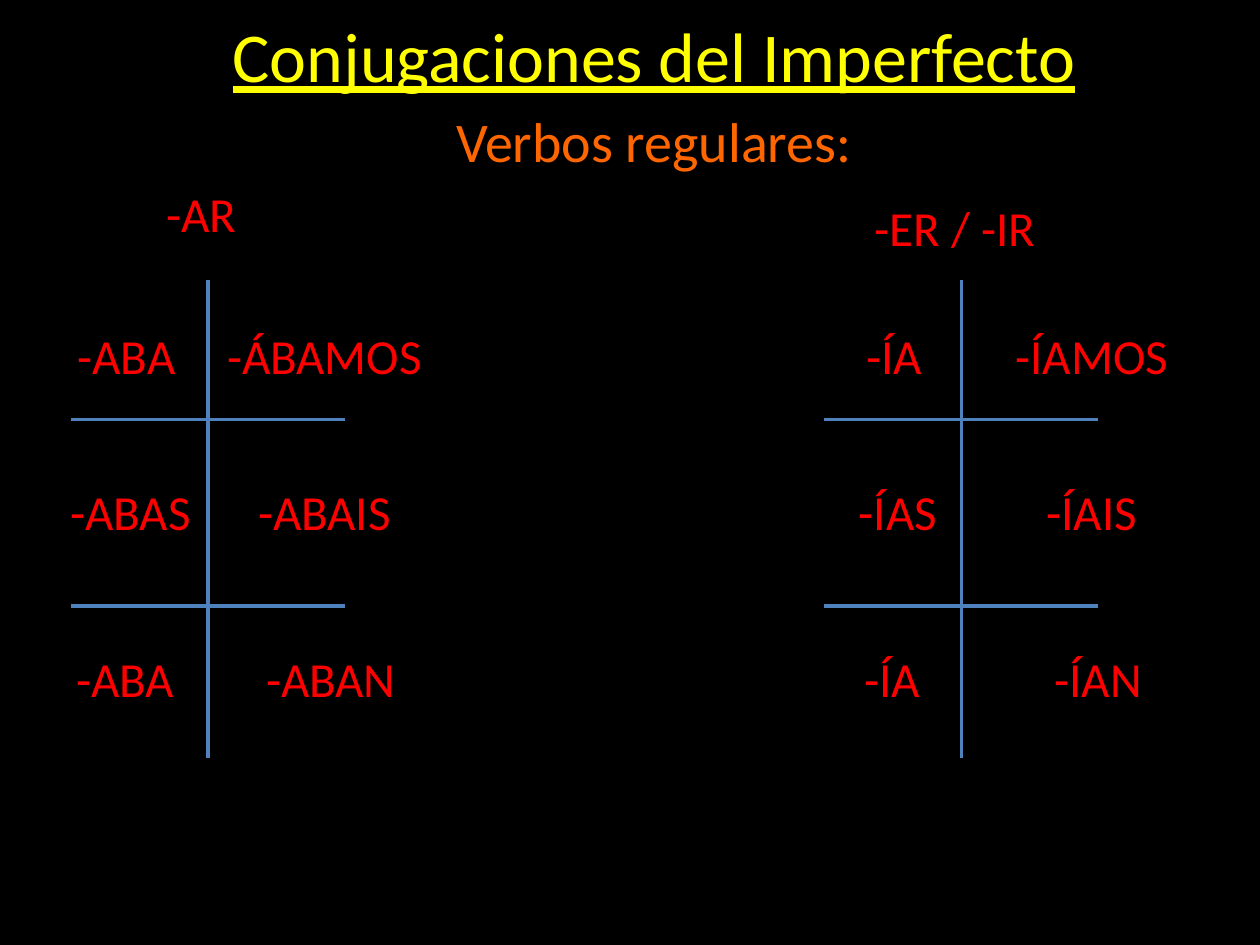
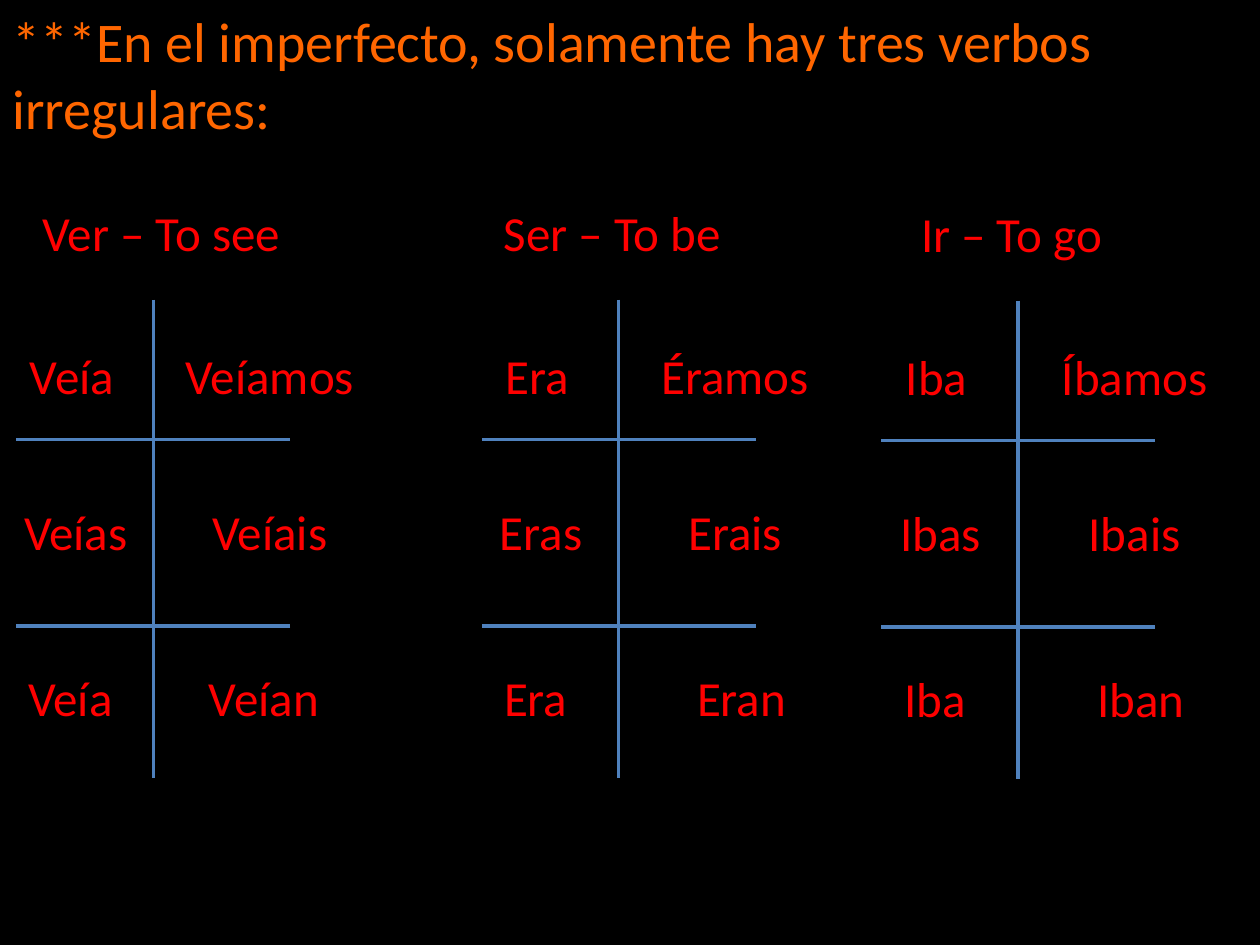
from dataclasses import dataclass

from lxml.etree import SubElement
from pptx import Presentation
from pptx.dml.color import RGBColor
from pptx.enum.shapes import MSO_CONNECTOR as Connector
from pptx.enum.text import MSO_ANCHOR as Anchor, MSO_AUTO_SIZE as AutoSize, PP_ALIGN as Align
from pptx.oxml.ns import qn
from pptx.util import Cm, Pt


@dataclass(frozen=True)
class Theme:
    font: str = "Calibri"
    background: RGBColor = RGBColor(0x00, 0x00, 0x00)
    title: RGBColor = RGBColor(0xFF, 0xFF, 0x00)
    subtitle: RGBColor = RGBColor(0xFF, 0x66, 0x00)
    verb: RGBColor = RGBColor(0xFF, 0x00, 0x00)
    rule: RGBColor = RGBColor(0x4F, 0x81, 0xBD)
    title_size: Pt = Pt(40)
    subtitle_size: Pt = Pt(32)
    verb_size: Pt = Pt(28)
    rule_width: Pt = Pt(2)


TITLE_SLIDE, TITLE_ONLY = 0, 5

# Conjugation chart, in cm, measured from the top of its vertical rule
RULE_LENGTH = 9.65
ARM = 2.76
ARM_TOPS = (2.82, 6.58)
CELL_WIDTH, CELL_HEIGHT = 5.26, 1.45
CELL_TOPS = (0.8, 3.95, 7.3)
SINGULAR_LEFTS = (-4.27, -4.19, -4.3)
PLURAL_LEFTS = (-0.28, -0.28, -0.15)


class VerbDeck:
    def __init__(self, theme):
        self.theme = theme
        self.deck = Presentation()
        self.deck.slide_width, self.deck.slide_height = Cm(25.4), Cm(19.05)
        fill = self.deck.slide_master.background.fill
        fill.solid()
        fill.fore_color.rgb = theme.background
        self.page = None

    def add_page(self, layout):
        self.page = self.deck.slides.add_slide(self.deck.slide_layouts[layout])

    def set_text(self, box, text, size, color, align=Align.CENTER, fit=AutoSize.NONE):
        frame = box.text_frame
        frame.text = text
        frame.word_wrap = True
        frame.auto_size = fit
        frame.vertical_anchor = Anchor.TOP
        para = frame.paragraphs[0]
        para.alignment = align
        para.space_before = Pt(0)
        para.font.name = self.theme.font
        para.font.size = size
        para.font.color.rgb = color
        return para

    def heading(self, index, text, place, size, color, align=Align.CENTER):
        """Fill the placeholder with this index and move it to place (cm)."""
        box = self.page.placeholders[index]
        box.left, box.top, box.width, box.height = map(Cm, place)
        return self.set_text(box, text, size, color, align)

    def label(self, text, left, top, width=CELL_WIDTH):
        box = self.page.shapes.add_textbox(Cm(left), Cm(top), Cm(width), Cm(CELL_HEIGHT))
        self.set_text(box, text, self.theme.verb_size, self.theme.verb,
                      fit=AutoSize.SHAPE_TO_FIT_TEXT)

    def rule(self, *ends):
        line = self.page.shapes.add_connector(Connector.STRAIGHT, *map(Cm, ends))
        line.line.color.rgb = self.theme.rule
        line.line.width = self.theme.rule_width
        SubElement(line._element.spPr, qn("a:effectLst"))

    def conjugation(self, verb, singular, plural, axis, top, verb_top,
                    verb_width=CELL_WIDTH, shift=0, last_shift=0):
        """Draw a verb chart; shift moves all forms, last_shift the last plural."""
        self.rule(axis, top, axis, top + RULE_LENGTH)
        for arm_top in ARM_TOPS:
            self.rule(axis + ARM, top + arm_top, axis - ARM, top + arm_top)
        self.label(verb, axis - ARM, verb_top, verb_width)
        plural_lefts = (*PLURAL_LEFTS[:2], PLURAL_LEFTS[2] + last_shift)
        for forms, lefts in ((singular, SINGULAR_LEFTS), (plural, plural_lefts)):
            for form, left, cell_top in zip(forms, lefts, CELL_TOPS):
                self.label(form, axis + left + shift, top + cell_top)


def add_regular_verbs(verbs):
    theme = verbs.theme
    verbs.add_page(TITLE_SLIDE)
    title = verbs.heading(0, "Conjugaciones del Imperfecto", (2.95, 0.13, 20.47, 1.96),
                          theme.title_size, theme.title)
    title.font.underline = True
    verbs.heading(1, "Verbos regulares:", (2.95, 2.01, 20.47, 1.63),
                  theme.subtitle_size, theme.subtitle)
    verbs.conjugation("-AR", ("-ABA", "-ABAS", "-ABA"), ("-ÁBAMOS", "-ABAIS", "-ABAN"),
                      axis=4.19, top=5.64, verb_top=3.58)
    verbs.conjugation("-ER / -IR", ("-ÍA", "-ÍAS", "-ÍA"), ("-ÍAMOS", "-ÍAIS", "-ÍAN"),
                      axis=19.38, top=5.64, verb_top=3.86, shift=0.28)


def add_irregular_verbs(verbs):
    theme = verbs.theme
    verbs.add_page(TITLE_ONLY)
    verbs.heading(0, "***En el imperfecto, solamente hay tres verbos irregulares:",
                  (0, 0, 24.92, 3), theme.subtitle_size, theme.subtitle, Align.LEFT)
    verbs.conjugation("Ver – To see", ("Veía", "Veías", "Veía"), ("Veíamos", "Veíais", "Veían"),
                      axis=3.09, top=6.04, verb_top=3.96, verb_width=5.84, last_shift=-0.25)
    verbs.conjugation("Ser – To be", ("Era", "Eras", "Era"), ("Éramos", "Erais", "Eran"),
                      axis=12.47, top=6.04, verb_top=3.96)
    verbs.conjugation("Ir – To go", ("Iba", "Ibas", "Iba"), ("Íbamos", "Ibais", "Iban"),
                      axis=20.52, top=6.06, verb_top=3.98)


def main():
    verbs = VerbDeck(Theme())
    add_regular_verbs(verbs)
    add_irregular_verbs(verbs)
    verbs.deck.save("out.pptx")


if __name__ == "__main__":
    main()
